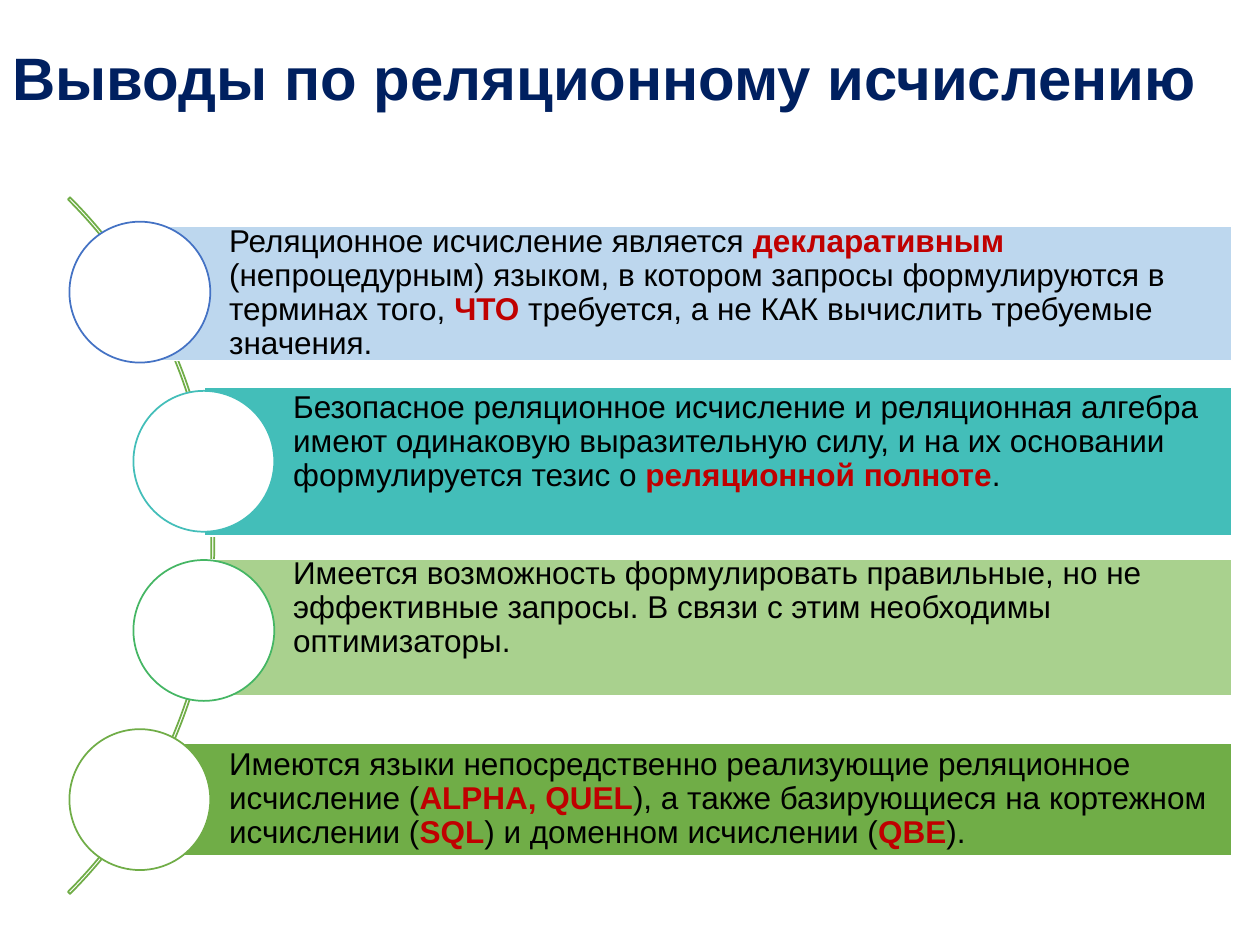
import pptx
import pptx.dml.color
import pptx.enum.shapes
import pptx.enum.text
import pptx.util

Cm = pptx.util.Cm
Pt = pptx.util.Pt
RGBColor = pptx.dml.color.RGBColor
MSO_SHAPE = pptx.enum.shapes.MSO_SHAPE

NAVY = RGBColor(0x00, 0x20, 0x60)
BLACK = RGBColor(0x00, 0x00, 0x00)
WHITE = RGBColor(0xFF, 0xFF, 0xFF)
RED = RGBColor(0xC0, 0x00, 0x00)
BLUE = RGBColor(0x44, 0x72, 0xC4)
PALE_BLUE = RGBColor(0xBD, 0xD7, 0xEE)
TEAL = RGBColor(0x43, 0xBE, 0xB9)
EMERALD = RGBColor(0x45, 0xB6, 0x64)
PALE_GREEN = RGBColor(0xA9, 0xD1, 0x8E)
GREEN = RGBColor(0x70, 0xAD, 0x47)

RIGHT_EDGE = 24.84
CIRCLE_SIZE = 2.84
FIRST_CIRCLE_TOP = 4.47
CIRCLE_STEP = 3.41

CONCLUSIONS = [
    (2.82, 4.55, 2.72, PALE_BLUE, BLUE,
     "Реляционное исчисление является *декларативным* (непроцедурным) языком, "
     "в котором запросы формулируются в \nтерминах того, *ЧТО* требуется, "
     "а не КАК вычислить требуемые \nзначения."),
    (4.11, 7.8, 3, TEAL, TEAL,
     "Безопасное реляционное исчисление и реляционная алгебра \n"
     "имеют одинаковую выразительную силу, и на их основании \n"
     "формулируется тезис о *реляционной полноте*.\n"),
    (4.11, 11.28, 2.74, PALE_GREEN, EMERALD,
     "Имеется возможность формулировать правильные, но не \n"
     "эффективные запросы. В связи с этим необходимы оптимизаторы.\n"),
    (2.82, 14.99, 2.26, GREEN, GREEN,
     "Имеются языки непосредственно реализующие реляционное \n"
     "исчисление (*ALPHA, QUEL*), а также базирующиеся на кортежном "
     "исчислении (*SQL*) и доменном исчислении (*QBE*)."),
]


def apply_format(target, values):
    for name, value in values.items():
        setattr(target, name, value)


class SlideBuilder:
    font_name = "Arial"
    line_width = Pt(1)

    def __init__(self, page):
        self.page = page

    def shape(self, kind, left, top, width, height, line, fill=None):
        shape = self.page.shapes.add_shape(
            kind, Cm(left), Cm(top), Cm(width), Cm(height))
        shape.shadow.inherit = False
        if fill is None:
            shape.fill.background()
        else:
            shape.fill.solid()
            shape.fill.fore_color.rgb = fill
        shape.line.color.rgb = line
        shape.line.width = self.line_width
        return shape

    def add_text(self, box, text, size, color, strong_color, bold=False):
        frame = box.text_frame
        apply_format(frame, {
            "word_wrap": True,
            "vertical_anchor": pptx.enum.text.MSO_ANCHOR.MIDDLE,
        })
        para = frame.paragraphs[0]
        apply_format(para, {
            "alignment": pptx.enum.text.PP_ALIGN.LEFT,
            "line_spacing": 0.9,
        })
        para.font.size = Pt(size)
        for index, part in enumerate(text.split("*")):
            strong = index % 2 == 1
            for row, piece in enumerate(part.split("\n")):
                if row:
                    para.add_line_break()
                if piece:
                    span = para.add_run()
                    span.text = piece
                    apply_format(span.font, {
                        "name": self.font_name,
                        "size": Pt(size),
                        "bold": bold or strong,
                    })
                    span.font.color.rgb = strong_color if strong else color

    def title(self, text):
        box = self.page.shapes.add_textbox(Cm(0), Cm(0.28), Cm(25.4), Cm(2.72))
        self.add_text(box, text, 34.2, NAVY, NAVY, bold=True)

    def arc(self):
        arc = self.shape(MSO_SHAPE.BLOCK_ARC, -15.54, 1.07, 19.86, 19.86, GREEN)
        for index, value in enumerate((189, 27, 0.003)):
            arc.adjustments[index] = value

    def bar(self, left, top, height, fill, text):
        bar = self.shape(MSO_SHAPE.RECTANGLE, left, top,
                         RIGHT_EDGE - left, height, WHITE, fill)
        apply_format(bar.text_frame, {
            "margin_left": Cm(1.8),
            "margin_top": Cm(0.13),
            "margin_right": Cm(0.13),
            "margin_bottom": Cm(0.13),
        })
        self.add_text(bar, text, 18, BLACK, RED)

    def circle(self, center, top, line):
        self.shape(MSO_SHAPE.OVAL, center - CIRCLE_SIZE / 2, top,
                   CIRCLE_SIZE, CIRCLE_SIZE, line, WHITE)


def main():
    deck = pptx.Presentation()
    apply_format(deck, {"slide_width": Cm(25.4), "slide_height": Cm(19.05)})
    builder = SlideBuilder(deck.slides.add_slide(deck.slide_layouts[6]))
    builder.title("Выводы по реляционному исчислению")
    builder.arc()
    for index, (left, top, height, fill, line, text) in enumerate(CONCLUSIONS):
        builder.bar(left, top, height, fill, text)
        builder.circle(left, FIRST_CIRCLE_TOP + index * CIRCLE_STEP, line)
    deck.save("out.pptx")


if __name__ == "__main__":
    main()
